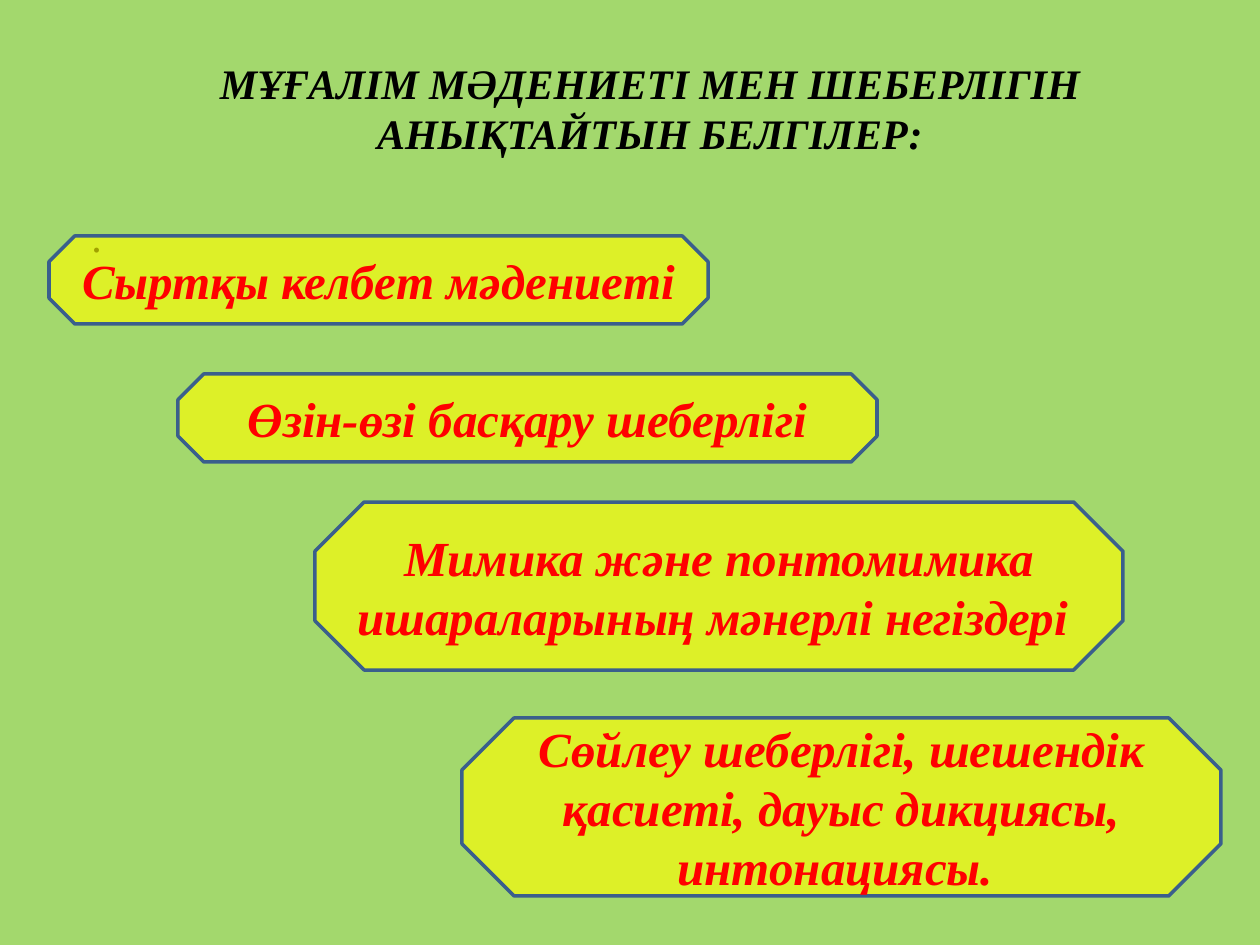
from lxml.etree import SubElement
from pptx import Presentation
from pptx.dml.color import RGBColor
from pptx.enum.shapes import MSO_SHAPE
from pptx.enum.text import MSO_ANCHOR, MSO_AUTO_SIZE, PP_ALIGN
from pptx.oxml.ns import qn
from pptx.util import Emu, Pt

PIXELS_PER_INCH = 126
FONT_NAME = "Times New Roman"
GREEN = RGBColor(0xA3, 0xD8, 0x6D)
YELLOW = RGBColor(0xFF, 0xFF, 0x00)
BLUE = RGBColor(0x3A, 0x5F, 0x8C)
RED = RGBColor(0xFF, 0x00, 0x00)
BLACK = RGBColor(0x00, 0x00, 0x00)
YELLOW_OPACITY = 63

TITLE = "МҰҒАЛІМ МӘДЕНИЕТІ МЕН ШЕБЕРЛІГІН АНЫҚТАЙТЫН БЕЛГІЛЕР:"
QUALITIES = [
    ("Сыртқы келбет мәдениеті", (49, 236, 659, 88)),
    ("Өзін-өзі басқару шеберлігі", (178, 374, 699, 88)),
    ("Сөйлеу шеберлігі, шешендік қасиеті, дауыс дикциясы, интонациясы. ",
     (462, 718, 759, 178)),
    ("Мимика және понтомимика ишараларының мәнерлі негіздері ",
     (315, 502, 808, 168)),
]


def px(length):
    return Emu(round(length * 914400 / PIXELS_PER_INCH))


def write_text(shape, text, size, color, alignment, anchor, emphasis=True):
    frame = shape.text_frame
    frame.word_wrap = True
    frame.auto_size = MSO_AUTO_SIZE.NONE
    frame.vertical_anchor = anchor
    frame.text = text
    paragraph = frame.paragraphs[0]
    paragraph.alignment = alignment
    font = paragraph.font
    font.name = FONT_NAME
    font.size = Pt(size)
    font.bold = font.italic = emphasis
    font.color.rgb = color


def place_title(slide):
    title = slide.shapes.title
    title.left, title.top, title.width, title.height = map(px, (69, 51, 1162, 120))
    write_text(title, TITLE, 24, BLACK, PP_ALIGN.CENTER, MSO_ANCHOR.TOP)


def add_full_stop(slide):
    box = slide.shapes.add_textbox(*map(px, (79, 204, 60, 63)))
    write_text(box, ".", 24, BLACK, PP_ALIGN.LEFT, MSO_ANCHOR.TOP, emphasis=False)


def add_quality(slide, text, bounds):
    octagon = slide.shapes.add_shape(MSO_SHAPE.OCTAGON, *map(px, bounds))
    octagon.shadow.inherit = False
    octagon.fill.solid()
    octagon.fill.fore_color.rgb = YELLOW
    color = octagon.fill._xPr.find(qn("a:solidFill"))[0]
    SubElement(color, qn("a:alpha"), val=str(YELLOW_OPACITY * 1000))
    octagon.line.color.rgb = BLUE
    octagon.line.width = Pt(2)
    write_text(octagon, text, 28, RED, PP_ALIGN.CENTER, MSO_ANCHOR.MIDDLE)


def main():
    presentation = Presentation()
    presentation.slide_width, presentation.slide_height = px(1260), px(945)
    slide = presentation.slides.add_slide(presentation.slide_layouts[5])
    slide.background.fill.solid()
    slide.background.fill.fore_color.rgb = GREEN
    place_title(slide)
    add_full_stop(slide)
    for text, bounds in QUALITIES:
        add_quality(slide, text, bounds)
    presentation.save("out.pptx")


if __name__ == "__main__":
    main()
